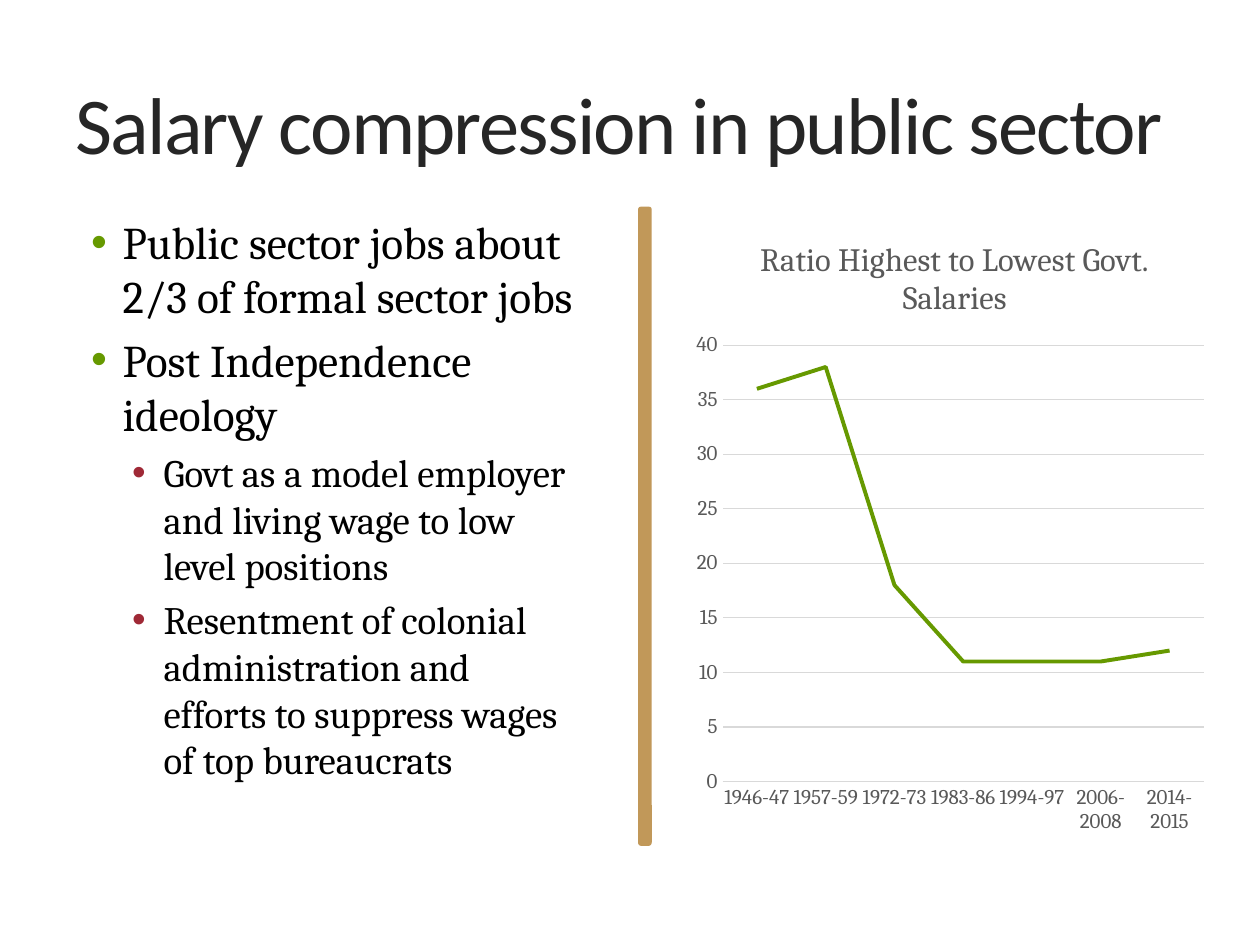
from lxml import etree
from pptx import Presentation
from pptx import util as u
from pptx.chart import data as cd
from pptx.dml.color import RGBColor
from pptx.enum import chart as ch, shapes, text
from pptx.oxml import ns, parse_xml

Pt = u.Pt
COLORS = {"title": "262626", "body": "000000", "bar": "C19859", "green": "669900",
          "red": "9F2936", "label": "595959", "grid": "D9D9D9", "white": "FFFFFF"}
TITLE_FONT, BODY_FONT = "Calibri", "Cambria"

# Per level: size, left margin, bullet colour
LEVELS = [(25.9, 27, "green"), (22.2, 50.4, "red")]
BULLETS = [
    (0, "Public sector jobs about 2/3 of formal sector jobs"),
    (0, "Post Independence ideology"),
    (1, "Govt as a model employer and living wage to low level positions"),
    (1, "Resentment of colonial administration and efforts to suppress wages of top bureaucrats"),
]
RATIOS = {"1946-47": 36, "1957-59": 38, "1972-73": 18, "1983-86": 11,
          "1994-97": 11, "2006-2008": 11, "2014-2015": 12}


def rgb(name):
    return RGBColor.from_string(COLORS[name])


def style(font, name, size, color):
    font.name, font.size, font.bold = name, Pt(size), False
    font.color.rgb = rgb(color)


def add_filled(s, kind, left, top, width, height, color):
    sp = s.shapes.add_shape(kind, Pt(left), Pt(top), Pt(width), Pt(height))
    sp.shadow.inherit = False
    sp.fill.solid()
    sp.fill.fore_color.rgb = rgb(color)
    return sp


def add_divider(s):
    bar = add_filled(s, shapes.MSO_SHAPE.ROUNDED_RECTANGLE,
                     365.6, 118.8, 5.8, 363.6, "bar")
    bar.line.color.rgb = rgb("bar")
    bar.line.width = Pt(2)


def add_title(s, title):
    sp = add_filled(s, shapes.MSO_SHAPE.RECTANGLE, 36, 21.6, 669.6, 96.5, "white")
    sp.line.fill.background()
    tf = sp.text_frame
    tf.word_wrap = True
    tf.vertical_anchor = text.MSO_ANCHOR.MIDDLE
    p = tf.paragraphs[0]
    p.alignment = text.PP_ALIGN.LEFT
    r = p.add_run()
    r.text = title
    style(r.font, TITLE_FONT, 46, "title")
    r.font._element.set("spc", "-100")


def add_bullet(p, color, margin):
    pPr = p._p.get_or_add_pPr()
    pPr.set("marL", str(Pt(margin)))
    pPr.set("indent", str(Pt(-18)))
    clr = etree.Element(ns.qn("a:buClr"))
    etree.SubElement(clr, ns.qn("a:srgbClr"), val=COLORS[color])
    font = etree.Element(ns.qn("a:buFont"), typeface="Arial")
    char = etree.Element(ns.qn("a:buChar"), char="•")
    # Bullet tags stand between the spacing and the default run properties
    for i, tag in enumerate((clr, font, char), start=1):
        pPr.insert(i, tag)


def add_bullets(s, items):
    tf = s.shapes.add_textbox(Pt(36), Pt(118.8), Pt(301.7), Pt(363.6)).text_frame
    tf.word_wrap = True
    for i, (level, line) in enumerate(items):
        p = tf.add_paragraph() if i else tf.paragraphs[0]
        size, margin, color = LEVELS[level]
        p.text, p.level = line, level
        p.space_before = Pt(round(size * 0.2, 1))
        style(p.font, BODY_FONT, size, "body")
        add_bullet(p, color, margin)


def set_layout(parent, **places):
    """Place a chart part by fractions of the chart's size."""
    for old in parent.findall(ns.qn("c:layout")):
        parent.remove(old)
    layout = parse_xml(f"<c:layout {ns.nsdecls('c')}><c:manualLayout/></c:layout>")
    for tag, val in places.items():
        etree.SubElement(layout[0], ns.qn(f"c:{tag}"), val=str(val))
    return layout


def style_axis(axis):
    axis.major_tick_mark = axis.minor_tick_mark = ch.XL_TICK_MARK.NONE
    style(axis.tick_labels.font, BODY_FONT, 12, "label")


def add_line_chart(s, title, ratios):
    data = cd.CategoryChartData()
    data.categories = list(ratios)
    data.add_series("Series 1", list(ratios.values()))
    chart = s.shapes.add_chart(ch.XL_CHART_TYPE.LINE, Pt(391.7), Pt(121.4),
                               Pt(302.4), Pt(361.4), data).chart
    style(chart.font, BODY_FONT, 10, "body")
    chart.has_legend = False

    # Title and plot area
    tf = chart.chart_title.text_frame
    tf.text = title
    style(tf.paragraphs[0].font, BODY_FONT, 18.6, "label")
    chart.chart_title.include_in_layout = False
    c_title = chart.chart_title._element
    c_title.insert(1, set_layout(c_title, xMode="edge", yMode="edge", x=0.13, y=0.03))
    plot_area = chart._chartSpace.chart.plotArea
    plot_area.insert(0, set_layout(plot_area, layoutTarget="inner", xMode="edge",
                                   yMode="edge", x=0.07, y=0.21, w=0.91, h=0.69))

    # Axes
    cat, val = chart.category_axis, chart.value_axis
    for axis in (cat, val):
        style_axis(axis)
    val.minimum_scale, val.maximum_scale, val.major_unit = 0, 40, 5
    val.format.line.fill.background()
    for line in (cat.format.line, val.major_gridlines.format.line):
        line.color.rgb = rgb("grid")
        line.width = Pt(0.75)

    # Series
    chart.plots[0].vary_by_categories = False
    series = chart.plots[0].series[0]
    series.smooth = False
    series.marker.style = ch.XL_MARKER_STYLE.NONE
    series.format.line.color.rgb = rgb("green")
    series.format.line.width = Pt(2.25)


def main():
    prs = Presentation()
    prs.slide_width, prs.slide_height = Pt(720), Pt(540)
    s = prs.slides.add_slide(prs.slide_layouts[6])
    add_divider(s)
    add_title(s, "Salary compression in public sector")
    add_bullets(s, BULLETS)
    add_line_chart(s, "Ratio Highest to Lowest Govt. Salaries", RATIOS)
    prs.save("out.pptx")


if __name__ == "__main__":
    main()
